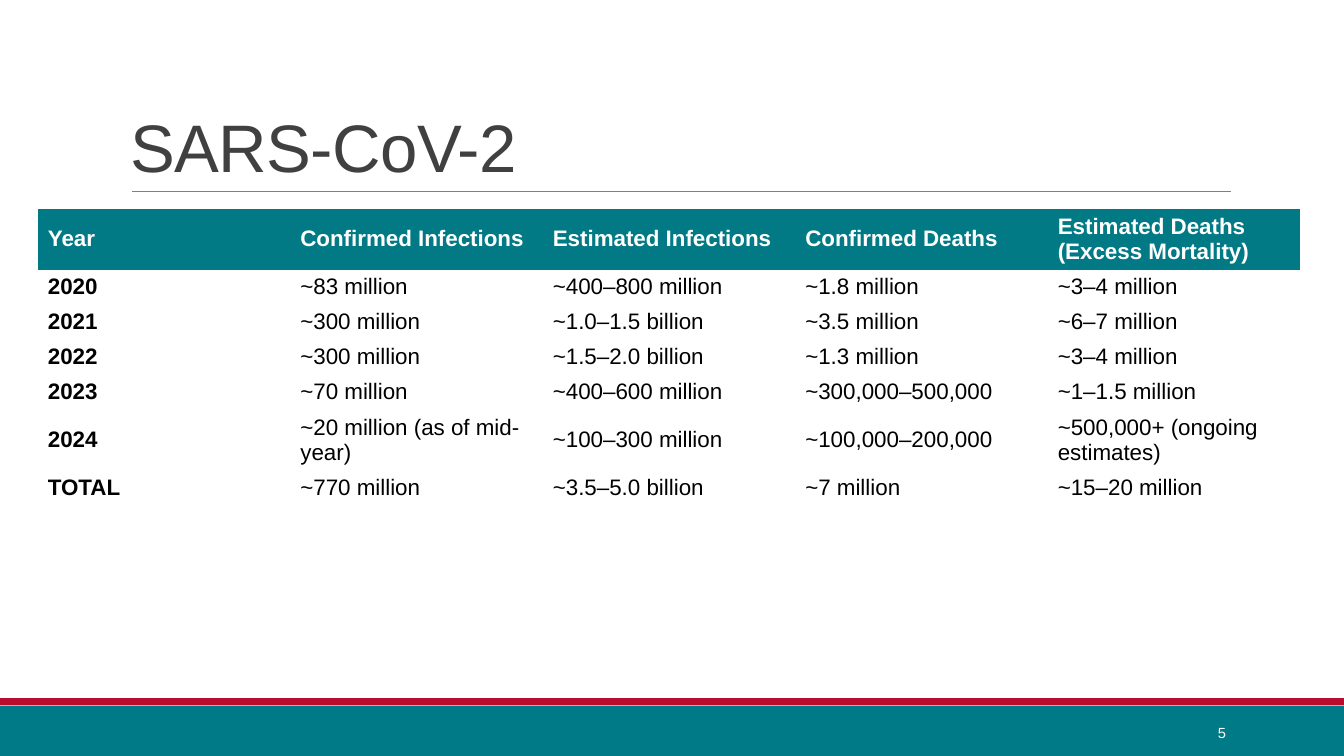
from dataclasses import dataclass

from lxml.etree import SubElement
from pptx import Presentation
from pptx.dml.color import RGBColor
from pptx.enum.shapes import MSO_CONNECTOR, MSO_SHAPE
from pptx.enum.text import MSO_ANCHOR, PP_ALIGN
from pptx.oxml.ns import qn
from pptx.util import Pt


@dataclass(frozen=True)
class Theme:
    font: str = "Arial"
    teal: RGBColor = RGBColor(0x00, 0x7A, 0x86)
    header_teal: RGBColor = RGBColor(0x01, 0x7A, 0x86)
    red: RGBColor = RGBColor(0xBA, 0x0C, 0x2F)
    grey: RGBColor = RGBColor(0x80, 0x80, 0x80)
    charcoal: RGBColor = RGBColor(0x40, 0x40, 0x40)
    black: RGBColor = RGBColor(0, 0, 0)
    white: RGBColor = RGBColor(0xFF, 0xFF, 0xFF)
    title_size: float = 48
    table_size: float = 16
    number_size: float = 10.5


theme = Theme()
NO_STYLE_NO_GRID = "{2D5ABB26-0587-4C30-8999-92F81FD0307C}"


def style_text(paragraph, size, color, bold=False):
    font = paragraph.runs[0].font
    font.name = theme.font
    font.size = Pt(size)
    font.color.rgb = color
    font.bold = bold


def add_label(text, left, top, width, height, size, color, anchor):
    """Add a one-paragraph text box and return its paragraph."""
    frame = slide.shapes.add_textbox(
        Pt(left), Pt(top), Pt(width), Pt(height)).text_frame
    frame.word_wrap = True
    frame.vertical_anchor = anchor
    frame.text = text
    style_text(frame.paragraphs[0], size, color)
    return frame.paragraphs[0]


presentation = Presentation()
presentation.slide_width = Pt(960)
presentation.slide_height = Pt(540)
slide = presentation.slides.add_slide(presentation.slide_layouts[6])

# Footer bands
for top, height, color in ((504, 36, theme.teal), (498.75, 5.04, theme.red)):
    band = slide.shapes.add_shape(
        MSO_SHAPE.RECTANGLE, 0, Pt(top), Pt(960), Pt(height))
    band.shadow.inherit = False
    band.fill.solid()
    band.fill.fore_color.rgb = color
    band.line.fill.background()

# Title and the rule below it
title_rule = slide.shapes.add_connector(
    MSO_CONNECTOR.STRAIGHT, Pt(94.2), Pt(136.8), Pt(879), Pt(136.8))
title_rule.line.color.rgb = theme.grey
title_rule.line.width = Pt(0.5)
SubElement(title_rule.element.spPr, qn("a:effectLst"))

title = add_label("SARS-CoV-2", 86.4, 22.3, 792, 114.5,
                  theme.title_size, theme.charcoal, MSO_ANCHOR.BOTTOM)
title.line_spacing = 0.85
title.runs[0].font._element.set("spc", "-50")

# Infections and deaths by year
yearly_figures = [
    ("Year", "Confirmed Infections", "Estimated Infections",
     "Confirmed Deaths", "Estimated Deaths (Excess Mortality)"),
    ("2020", "~83 million", "~400–800 million", "~1.8 million", "~3–4 million"),
    ("2021", "~300 million", "~1.0–1.5 billion", "~3.5 million", "~6–7 million"),
    ("2022", "~300 million", "~1.5–2.0 billion", "~1.3 million", "~3–4 million"),
    ("2023", "~70 million", "~400–600 million", "~300,000–500,000",
     "~1–1.5 million"),
    ("2024", "~20 million (as of mid-year)", "~100–300 million",
     "~100,000–200,000", "~500,000+ (ongoing estimates)"),
    ("TOTAL", "~770 million", "~3.5–5.0 billion", "~7 million",
     "~15–20 million"),
]
row_heights = [42.2, 25, 25, 25, 25, 42.2, 25]
column_width = 180.35

table_frame = slide.shapes.add_table(
    len(yearly_figures), len(yearly_figures[0]), Pt(27), Pt(149.2),
    Pt(column_width * len(yearly_figures[0])), Pt(sum(row_heights)))
for style_id in table_frame.element.iter(qn("a:tableStyleId")):
    style_id.text = NO_STYLE_NO_GRID
table = table_frame.table
table.horz_banding = False

for column in table.columns:
    column.width = Pt(column_width)

for row_index, (row, figures) in enumerate(zip(table.rows, yearly_figures)):
    row.height = Pt(row_heights[row_index])
    is_header = row_index == 0
    for column_index, (cell, figure) in enumerate(zip(row.cells, figures)):
        cell.text_frame.text = figure
        cell.vertical_anchor = MSO_ANCHOR.MIDDLE
        cell.margin_top = cell.margin_bottom = Pt(2.5)
        if is_header:
            cell.fill.solid()
            cell.fill.fore_color.rgb = theme.header_teal
        else:
            cell.fill.background()
        style_text(cell.text_frame.paragraphs[0], theme.table_size,
                   theme.white if is_header else theme.black,
                   bold=is_header or column_index == 0)

slide_number = add_label("5", 779.8, 508.6, 103, 28.8,
                         theme.number_size, theme.white, MSO_ANCHOR.MIDDLE)
slide_number.alignment = PP_ALIGN.RIGHT

presentation.save("out.pptx")
